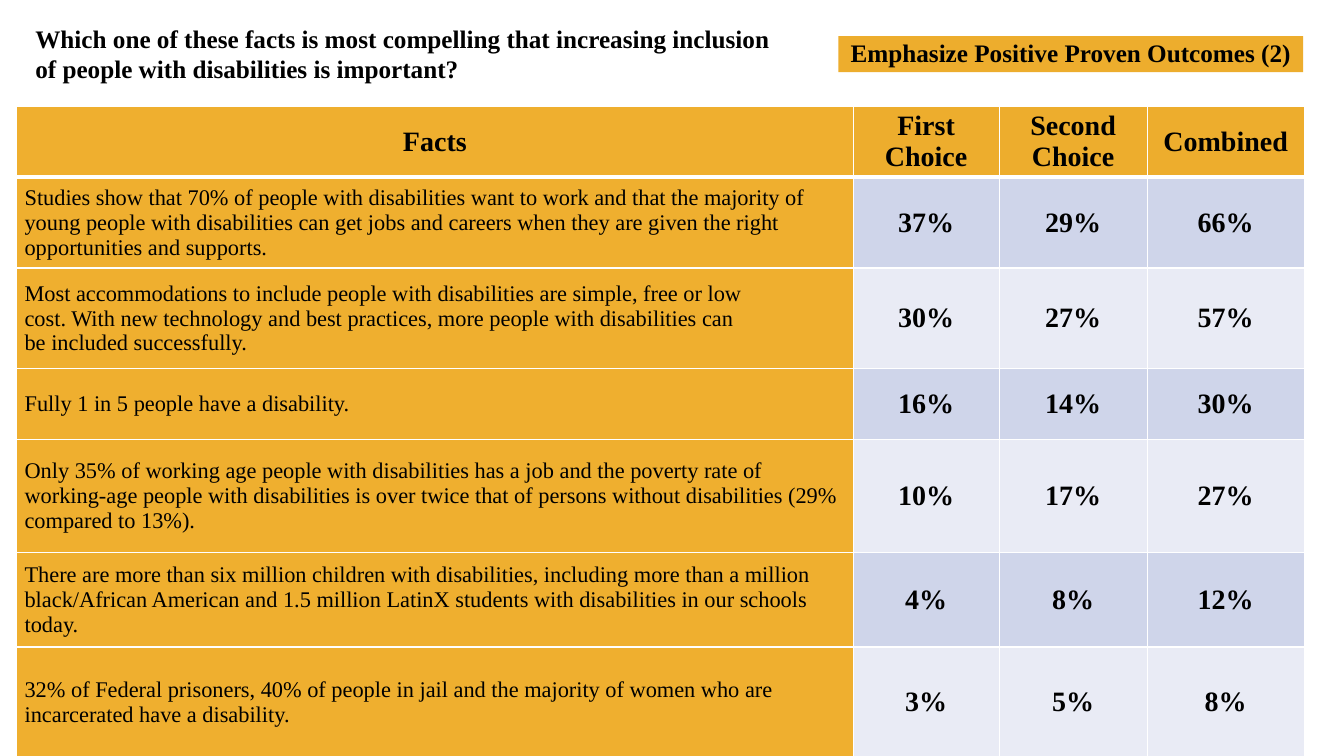
from lxml.etree import SubElement
from pptx import Presentation
from pptx.dml.color import RGBColor
from pptx.enum.text import MSO_ANCHOR, PP_ALIGN
from pptx.oxml.ns import qn
from pptx.util import Cm, Pt

BLACK = RGBColor(0x00, 0x00, 0x00)
WHITE = RGBColor(0xFF, 0xFF, 0xFF)
GOLD = RGBColor(0xED, 0xAD, 0x2D)
FACT_GOLD = RGBColor(0xEF, 0xAF, 0x2F)
BLUE_BANDS = [RGBColor(0xCF, 0xD5, 0xEA), RGBColor(0xE9, 0xEB, 0xF5)]

HEADINGS = ["Facts", "First Choice", "Second Choice", "Combined"]
COLUMN_WIDTHS = [21.08, 3.68, 3.73, 3.96]
HEADING_HEIGHT = 1.78

# Row height, fact, first choice, second choice
FACTS = [
    (2.29, "Studies show that 70% of people with disabilities want to work and that "
           "the majority of young people with disabilities can get jobs and careers "
           "when they are given the right opportunities and supports.", 37, 29),
    (2.54, "Most accommodations to include people with disabilities are simple, free or low\n"
           "cost. With new technology and best practices, more people with disabilities can\n"
           "be included successfully.", 30, 27),
    (1.78, "Fully 1 in 5 people have a disability.", 16, 14),
    (2.84, "Only 35% of working age people with disabilities has a job and the poverty "
           "rate of working-age people with disabilities is over twice that of persons "
           "without disabilities (29% compared to 13%).", 10, 17),
    (2.39, "There are more than six million children with disabilities, including more "
           "than a million black/African American and 1.5 million LatinX students with "
           "disabilities in our schools today.", 4, 8),
    (2.77, "32% of Federal prisoners, 40% of people in jail and the majority of women "
           "who are incarcerated have a disability.", 3, 5),
]


def write(frame, text, size=18, bold=True, align=PP_ALIGN.LEFT, spacing=1.0):
    frame.word_wrap = True
    for number, line in enumerate(text.split("\n")):
        paragraph = frame.add_paragraph() if number else frame.paragraphs[0]
        paragraph.alignment = align
        paragraph.line_spacing = spacing
        run = paragraph.add_run()
        run.text = line
        run.font.name = "Times New Roman"
        run.font.size = Pt(size)
        run.font.bold = bold
        run.font.color.rgb = BLACK


def add_border(cell, side, points):
    line = SubElement(cell._tc.get_or_add_tcPr(), qn(f"a:ln{side}"), w=str(Pt(points)))
    fill = SubElement(line, qn("a:solidFill"))
    SubElement(fill, qn("a:srgbClr"), val=str(WHITE))


presentation = Presentation()
presentation.slide_width = Cm(33.87)
presentation.slide_height = Cm(19.05)
slide = presentation.slides.add_slide(presentation.slide_layouts[6])

# Title on a gold band
title = slide.shapes.add_textbox(Cm(21.13), Cm(0.91), Cm(11.71), Cm(0.91))
title.fill.solid()
title.fill.fore_color.rgb = GOLD
title.text_frame.vertical_anchor = MSO_ANCHOR.MIDDLE
write(title.text_frame, "Emphasize Positive Proven Outcomes (2)",
      align=PP_ALIGN.CENTER, spacing=0.9)

# Survey question
question = slide.shapes.add_textbox(Cm(0), Cm(0.46), Cm(20.09), Cm(1.8))
question.text_frame.margin_left = Cm(0.89)
write(question.text_frame, "Which one of these facts is most compelling that increasing "
                           "inclusion of people with disabilities is important?")

# Table of answers
row_heights = [HEADING_HEIGHT] + [height for height, *_ in FACTS]
answers = slide.shapes.add_table(
    len(row_heights), len(HEADINGS), Cm(0.42), Cm(2.67),
    Cm(sum(COLUMN_WIDTHS)), Cm(sum(row_heights))).table
answers.horz_banding = False
for column, width in zip(answers.columns, COLUMN_WIDTHS):
    column.width = Cm(width)
for row, height in zip(answers.rows, row_heights):
    row.height = Cm(height)

contents = [HEADINGS]
for _, fact, first, second in FACTS:
    contents.append([fact, f"{first}%", f"{second}%", f"{first + second}%"])

for row_number, texts in enumerate(contents):
    is_heading = row_number == 0
    for column_number, text in enumerate(texts):
        is_fact = column_number == 0 and not is_heading
        cell = answers.cell(row_number, column_number)
        cell.vertical_anchor = MSO_ANCHOR.MIDDLE
        cell.margin_left = cell.margin_right = Cm(0.2)
        cell.margin_top = cell.margin_bottom = Cm(0.05)

        # White rules, thicker under the headings
        add_border(cell, "L", 1)
        add_border(cell, "R", 1)
        if is_heading:
            add_border(cell, "T", 1)
        add_border(cell, "B", 3 if is_heading else 1)

        cell.fill.solid()
        if column_number == 0:
            cell.fill.fore_color.rgb = FACT_GOLD
        elif is_heading:
            cell.fill.fore_color.rgb = GOLD
        else:
            cell.fill.fore_color.rgb = BLUE_BANDS[(row_number - 1) % 2]

        write(cell.text_frame, text, size=16 if is_fact else 20, bold=not is_fact,
              align=PP_ALIGN.LEFT if is_fact else PP_ALIGN.CENTER)

presentation.save("out.pptx")
